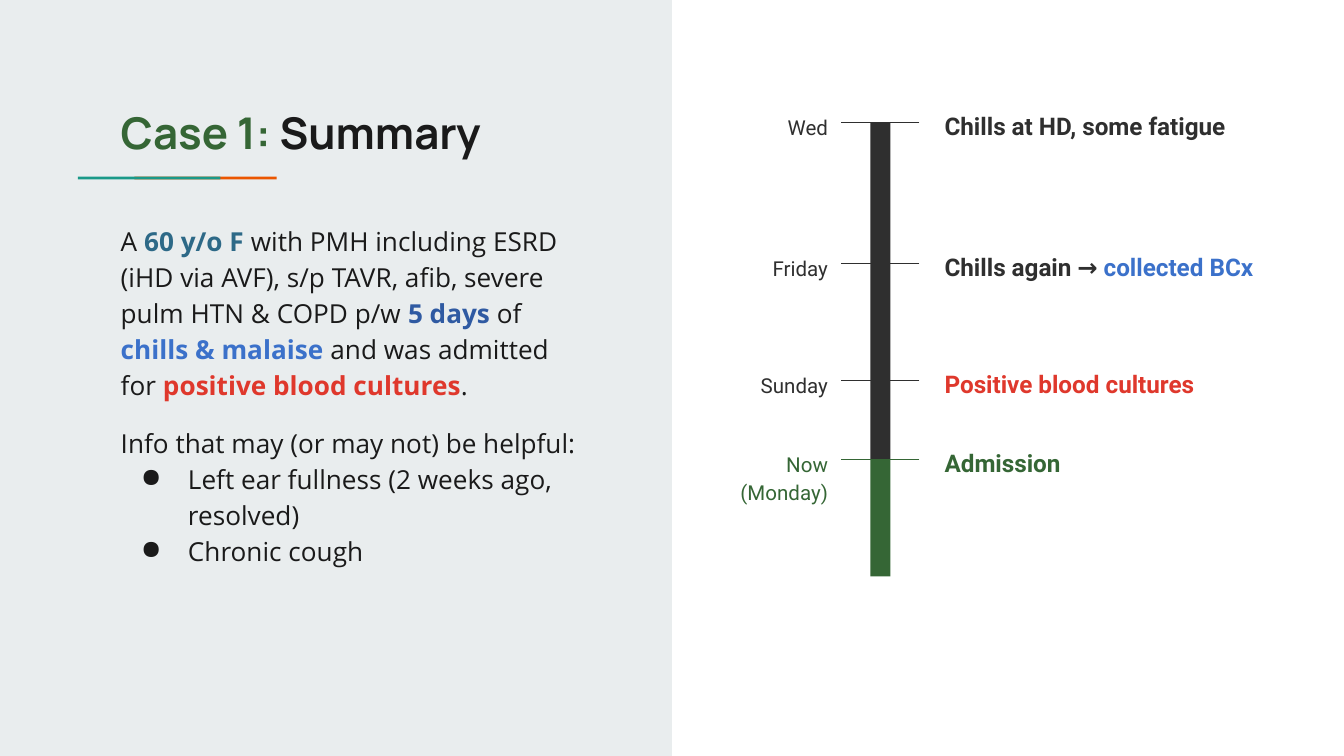
from lxml import etree
from pptx import Presentation
from pptx import util as u
from pptx.dml.color import RGBColor
from pptx.enum import shapes, text
from pptx.oxml.ns import qn

COLS, ROWS = 100, 56.25  # square grid, ten cells to the inch
COLORS = {
    "panel": "E9EDEE", "ink": "1A1A1A", "dark": "2F2F2F", "green": "356635",
    "teal": "1A9988", "orange": "EB5600", "steel": "2D6987", "navy": "2F5AA2",
    "blue": "3B71CA", "red": "DF382C",
}
# Each run is (wording, colour, bold).
TITLE = [("Case 1:", "green", True), (" Summary", "ink", True)]
HISTORY = [
    ("A ", "ink", False), ("60 y/o F", "steel", True),
    (" with PMH including ESRD (iHD via AVF), s/p TAVR, afib, severe "
     "pulm HTN & COPD p/w ", "ink", False),
    ("5 days", "navy", True), (" of ", "ink", False),
    ("chills & malaise", "blue", True),
    (" and was admitted for ", "ink", False),
    ("positive blood cultures", "red", True), (".", "ink", False),
]
HINT = "Info that may (or may not) be helpful:"
HINTS = ["Left ear fullness (2 weeks ago, resolved)", "Chronic cough"]
# Row below the top of the timeline, day, day width, day colour, event runs.
EVENTS = [
    (0, "Wed", 8.3, "dark", [("Chills at HD, some fatigue", "dark", True)]),
    (10.5, "Friday", 8.3, "dark",
     [("Chills again → ", "dark", True), ("collected BCx", "blue", True)]),
    (19.2, "Sunday", 8.3, "dark",
     [("Positive blood cultures", "red", True)]),
    (25.1, "Now\n(Monday)", 9.7, "green", [("Admission", "green", True)]),
]


def grid(n):
    return u.Inches(n / 10)


def rgb(name):
    return RGBColor.from_string(COLORS[name])


def add_block(slide, x, y, w, h, color):
    sp = slide.shapes.add_shape(shapes.MSO_SHAPE.RECTANGLE,
                                grid(x), grid(y), grid(w), grid(h))
    sp.shadow.inherit = False
    sp.fill.solid()
    sp.fill.fore_color.rgb = rgb(color)
    sp.line.fill.background()


def add_tick(slide, x, y, w, color):
    line = slide.shapes.add_connector(shapes.MSO_CONNECTOR.STRAIGHT,
                                      grid(x + w), grid(y), grid(x), grid(y))
    line.line.color.rgb = rgb(color)
    line.line.width = u.Pt(0.75)
    etree.SubElement(line.element.spPr, qn("a:effectLst"))


def add_text(slide, x, y, w, h, paragraphs, font, size, spacing=1.15,
             align=text.PP_ALIGN.LEFT):
    """Add a wrapped text box; each paragraph is a list of runs."""
    tf = slide.shapes.add_textbox(grid(x), grid(y), grid(w), grid(h)).text_frame
    tf.word_wrap = True
    tf.vertical_anchor = text.MSO_ANCHOR.TOP
    tf.margin_left = tf.margin_right = grid(1)
    tf.margin_top = tf.margin_bottom = grid(1)
    for i, runs in enumerate(paragraphs):
        p = tf.add_paragraph() if i else tf.paragraphs[0]
        p.alignment = align
        p.line_spacing = spacing
        for wording, color, bold in runs:
            r = p.add_run()
            r.text = wording
            r.font.name, r.font.size, r.font.bold = font, u.Pt(size), bold
            r.font.color.rgb = rgb(color)
    return tf


def add_bullet(p, color):
    pPr = p._p.get_or_add_pPr()
    pPr.set("marL", str(u.Inches(0.5)))
    pPr.set("indent", str(u.Inches(-0.35)))
    bu_color = etree.SubElement(pPr, qn("a:buClr"))
    etree.SubElement(bu_color, qn("a:srgbClr"), val=COLORS[color])
    etree.SubElement(pPr, qn("a:buChar"), char="●")


def add_summary(slide, x, y, w, h):
    """Left panel: title, two-colour rule and case history."""
    add_block(slide, x, y, w, h, "panel")
    for left, color in ((10, "orange"), (5.8, "teal")):
        add_block(slide, x + left, y + 13.15, 10.6, 0.2, color)
    add_text(slide, x + 8, y + 6.9, w - 8.8, 5.9, [TITLE], "Manrope", 23.4, 1)
    plain = [[(line, "ink", False)] for line in [HINT, *HINTS]]
    tf = add_text(slide, x + 8, y + 15.4, w - 13.1, 33.1,
                  [HISTORY, *plain], "Open Sans", 14)
    tf.paragraphs[1].space_before = u.Pt(12)
    for p in tf.paragraphs[2:]:
        add_bullet(p, "ink")


def add_timeline(slide, x, y, w, h):
    """Vertical bar with a tick, a day and an event at each step."""
    tick_x, tick_w, bar_w = x + 9.7, 5.8, 1.5
    ends = [event[0] for event in EVENTS[1:]] + [h]
    for (row, day, day_w, color, runs), end in zip(EVENTS, ends):
        top = y + row
        add_block(slide, tick_x + (tick_w - bar_w) / 2, top, bar_w,
                  end - row, color)
        add_tick(slide, tick_x, top, tick_w, color)
        add_text(slide, x + 16.4, top - 2.15, w - 16.4, 3, [runs], "Roboto", 13)
        add_text(slide, tick_x - day_w, top - 1.85, day_w, 3.8,
                 [[(line, color, False)] for line in day.split("\n")],
                 "Roboto", 11, align=text.PP_ALIGN.RIGHT)


def main():
    prs = Presentation()
    prs.slide_width, prs.slide_height = grid(COLS), grid(ROWS)
    slide = prs.slides.add_slide(prs.slide_layouts[6])
    add_summary(slide, 0, 0, COLS / 2, ROWS)
    add_timeline(slide, 52.9, 9.1, 46.2, 33.8)
    prs.save("out.pptx")


if __name__ == "__main__":
    main()
